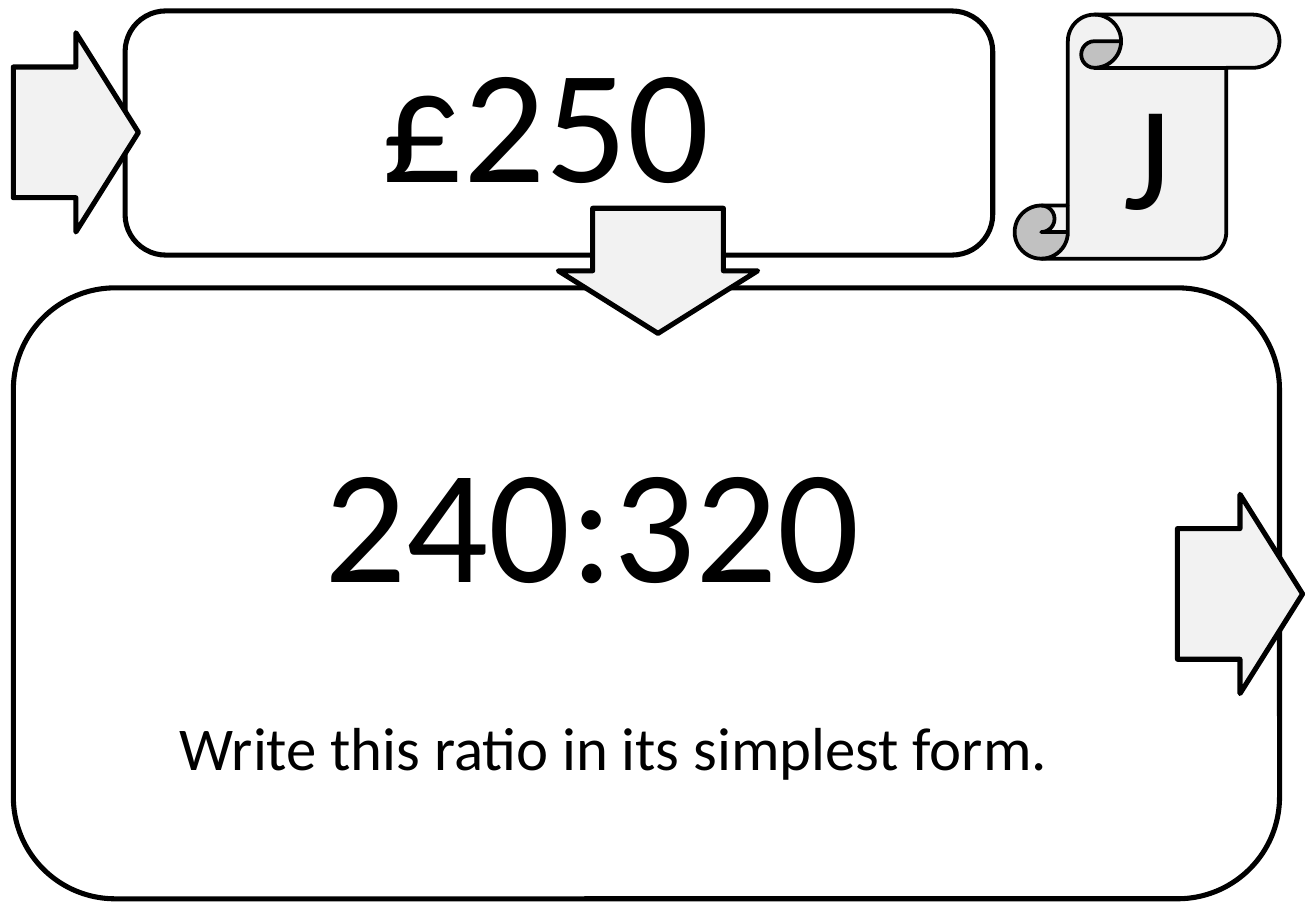
"""Build a ratio loop card with an answer, a question and direction arrows."""
from pptx import Presentation
from pptx.dml.color import RGBColor
from pptx.enum.shapes import MSO_SHAPE
from pptx.enum.text import MSO_ANCHOR, MSO_AUTO_SIZE, PP_ALIGN
from pptx.util import Inches, Pt

ROUNDED = MSO_SHAPE.ROUNDED_RECTANGLE
ARROW = MSO_SHAPE.RIGHT_ARROW
SCROLL = MSO_SHAPE.VERTICAL_SCROLL
MIDDLE = MSO_ANCHOR.MIDDLE
CENTER = PP_ALIGN.CENTER
FIT_SHAPE = MSO_AUTO_SIZE.SHAPE_TO_FIT_TEXT

BLACK = RGBColor(0x00, 0x00, 0x00)
LIGHT_GREY = RGBColor(0xF2, 0xF2, 0xF2)
FONT_NAME = "Calibri"
ARROW_WIDTH, ARROW_HEIGHT = 1.03, 1.64


def write_text(shape, text, size):
    """Put one line of black text in a shape and return its paragraph."""
    paragraph = shape.text_frame.paragraphs[0]
    paragraph.text = text
    paragraph.font.name = FONT_NAME
    paragraph.font.size = Pt(size)
    paragraph.font.color.rgb = BLACK
    return paragraph


def add_outlined(slide, kind, left, top, width, height, fill=None, weight=3):
    """Add a black-outlined preset shape, hollow unless a fill is given."""
    shape = slide.shapes.add_shape(
        kind, Inches(left), Inches(top), Inches(width), Inches(height))
    shape.shadow.inherit = False
    if fill is None:
        shape.fill.background()
    else:
        shape.fill.solid()
        shape.fill.fore_color.rgb = fill
    shape.line.color.rgb = BLACK
    shape.line.width = Pt(weight)
    return shape


def add_arrow(slide, left, top, rotation=0):
    """Add a grey block arrow, pointing right before rotation."""
    arrow = add_outlined(slide, ARROW, left, top, ARROW_WIDTH, ARROW_HEIGHT, LIGHT_GREY)
    arrow.adjustments[0] = 0.656
    arrow.adjustments[1] = 0.5
    arrow.rotation = rotation


def add_letter_scroll(slide, letter):
    """Add the scroll that carries the card letter."""
    scroll = add_outlined(slide, SCROLL, 8.35, 0.12, 2.18, 2.01, LIGHT_GREY, 2.25)
    scroll.adjustments[0] = 0.218
    scroll.text_frame.vertical_anchor = MIDDLE
    write_text(scroll, letter, 88).alignment = CENTER


def add_label(slide, text, left, top, width, height, size):
    """Add a single-line text box that fits its text."""
    label = slide.shapes.add_textbox(
        Inches(left), Inches(top), Inches(width), Inches(height))
    label.text_frame.word_wrap = False
    label.text_frame.auto_size = FIT_SHAPE
    write_text(label, text, size)


def main():
    """Build the card and save it."""
    presentation = Presentation()
    presentation.slide_width = Inches(10.83)
    presentation.slide_height = Inches(7.5)
    slide = presentation.slides.add_slide(presentation.slide_layouts[6])

    add_outlined(slide, ROUNDED, 0.11, 2.37, 10.42, 5.03)
    add_outlined(slide, ROUNDED, 1.03, 0.09, 7.14, 2.01)
    add_arrow(slide, 9.69, 4.07)
    add_arrow(slide, 4.9, 1.41, rotation=90)
    add_arrow(slide, 0.11, 0.27)
    add_letter_scroll(slide, "J")
    add_label(slide, "Write this ratio in its simplest form.", 1.38, 5.79, 7.41, 0.71, 36)
    add_label(slide, "£250", 3.04, 0.12, 2.93, 1.72, 96)
    add_label(slide, "240:320", 2.57, 3.41, 4.65, 1.72, 96)

    presentation.save("out.pptx")


if __name__ == "__main__":
    main()
